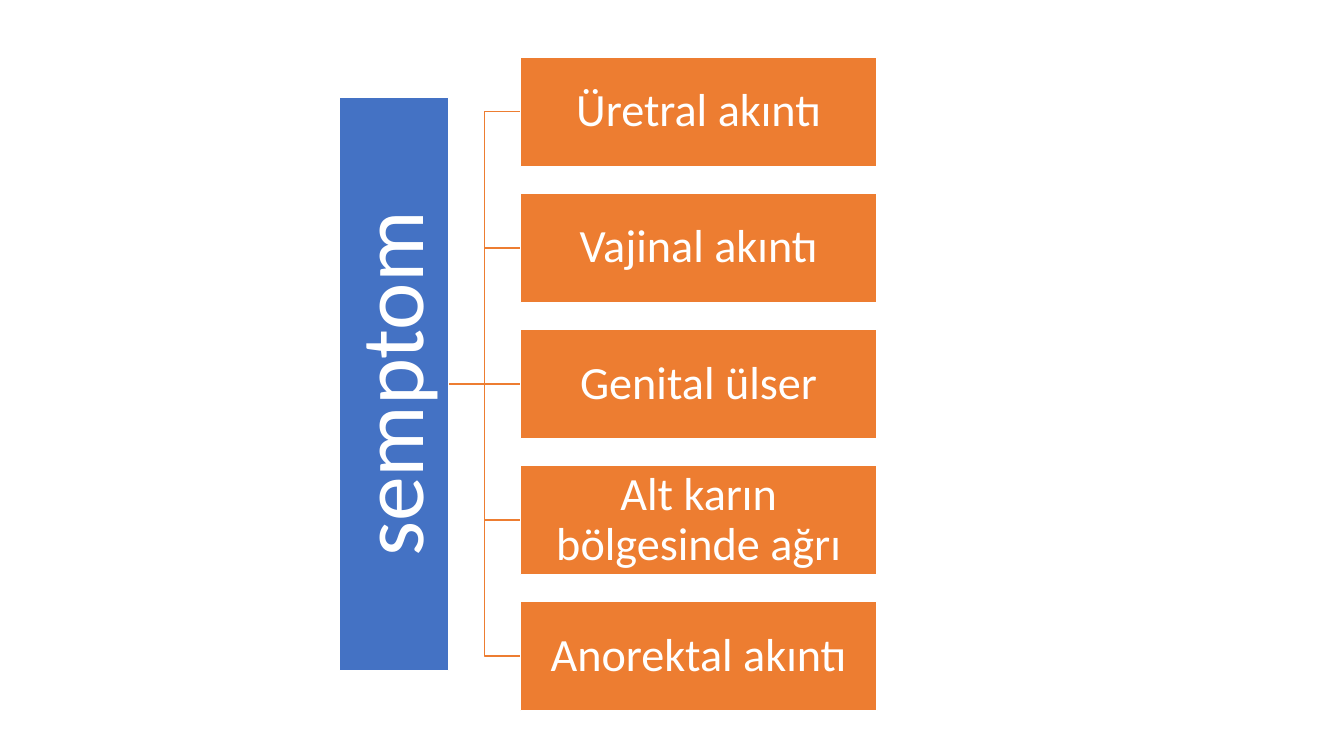
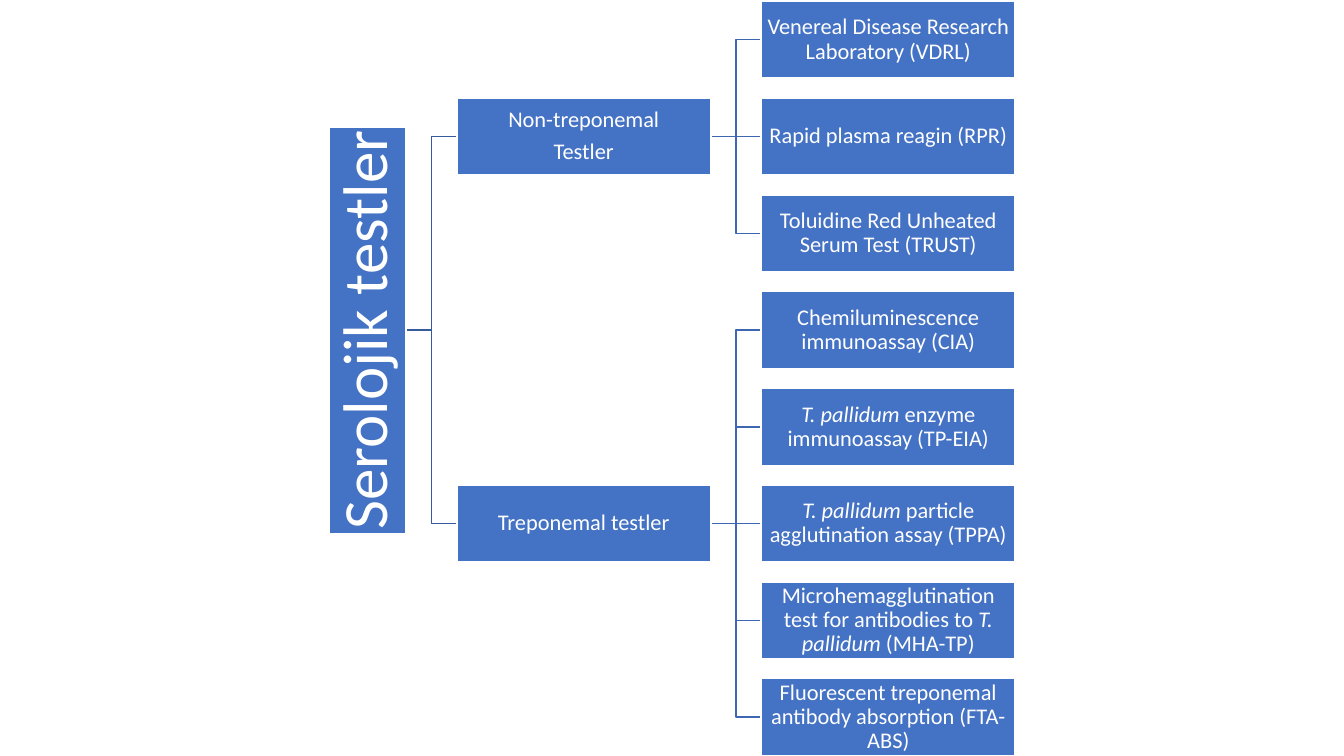
from dataclasses import dataclass

import pptx
import pptx.dml.color
import pptx.enum.shapes
import pptx.enum.text
import pptx.oxml.ns
import pptx.shapes.autoshape
import pptx.slide
import pptx.util
from lxml import etree

Inches = pptx.util.Inches
Pt = pptx.util.Pt
RGBColor = pptx.dml.color.RGBColor
Box = pptx.shapes.autoshape.Shape
Page = pptx.slide.Slide

FONT = "Calibri"
WHITE = RGBColor(0xFF, 0xFF, 0xFF)
BLUE = RGBColor(0x44, 0x72, 0xC4)
MID_BLUE = RGBColor(0x3E, 0x67, 0xB2)
DARK_BLUE = RGBColor(0x36, 0x5B, 0x9D)
ORANGE = RGBColor(0xED, 0x7D, 0x31)

ITALIC_NAME = "T. pallidum"
LEFT_SIDE, RIGHT_SIDE = 1, 3


@dataclass(frozen=True)
class Node:
    text: str
    children: tuple["Node", ...] = ()


@dataclass(frozen=True)
class TreeStyle:
    """Lengths in inches; text sizes and line widths in points."""
    left: float
    top: float
    bar_height: float
    box_width: float
    box_height: float
    column_gap: float
    row_pitch: float
    bar_size: int
    box_size: int
    bar_inset: float
    box_inset: float
    border: float
    box_fill: RGBColor
    line_colors: tuple[RGBColor, ...]

    def column(self, depth: int) -> float:
        """Left edge of a level; level 0 is the upright bar."""
        if depth == 0:
            return self.left
        first = self.left + self.box_height + self.column_gap
        return first + (depth - 1) * (self.box_width + self.column_gap)


def leaves(*texts: str) -> tuple[Node, ...]:
    return tuple(Node(text) for text in texts)


SYMPTOMS = Node("semptom", leaves(
    "Üretral akıntı",
    "Vajinal akıntı",
    "Genital ülser",
    "Alt karın bölgesinde ağrı",
    "Anorektal akıntı",
))
SYMPTOM_STYLE = TreeStyle(
    left=3.37, top=0.57, bar_height=5.68, box_width=3.54, box_height=1.08,
    column_gap=0.71, row_pitch=1.35, bar_size=64, box_size=33,
    bar_inset=0.04, box_inset=0.02, border=1,
    box_fill=ORANGE, line_colors=(ORANGE,),
)

TESTS = Node("Serolojik testler", (
    Node("Non-treponemal\nTestler", leaves(
        "Venereal Disease Research Laboratory (VDRL)",
        "Rapid plasma reagin (RPR)",
        "Toluidine Red Unheated Serum Test (TRUST)",
    )),
    Node("Treponemal testler", leaves(
        "Chemiluminescence immunoassay (CIA)",
        "T. pallidum enzyme immunoassay (TP-EIA)",
        "T. pallidum particle agglutination assay (TPPA)",
        "Microhemagglutination test for antibodies to T. pallidum (MHA-TP)",
        "Fluorescent treponemal antibody absorption (FTA-ABS)",
    )),
))
TEST_STYLE = TreeStyle(
    left=3.26, top=0.01, bar_height=4.04, box_width=2.52, box_height=0.77,
    column_gap=0.5, row_pitch=0.96, bar_size=45, box_size=16,
    bar_inset=0.03, box_inset=0.01, border=1.5,
    box_fill=BLUE, line_colors=(DARK_BLUE, MID_BLUE),
)


def write_text(box: Box, text: str, size: int, inset: float) -> None:
    """Fill a box with centred white text, the species name in italics."""
    frame = box.text_frame
    frame.word_wrap = True
    frame.vertical_anchor = pptx.enum.text.MSO_ANCHOR.MIDDLE
    frame.margin_left = frame.margin_right = Inches(inset)
    frame.margin_top = frame.margin_bottom = Inches(inset)
    for index, line in enumerate(text.split("\n")):
        para = frame.add_paragraph() if index else frame.paragraphs[0]
        para.alignment = pptx.enum.text.PP_ALIGN.CENTER
        para.line_spacing = 0.9
        para.space_after = Pt(0.35 * size)
        para.font.name = FONT
        para.font.size = Pt(size)
        para.font.color.rgb = WHITE
        for part in filter(None, line.partition(ITALIC_NAME)):
            span = para.add_run()
            span.text = part
            if part == ITALIC_NAME:
                span.font.italic = True


def add_box(page: Page, node: Node, style: TreeStyle, depth: int, middle: float) -> Box:
    """Draw one node centred on a height; the root is an upright bar."""
    is_bar = depth == 0
    width = style.box_height if is_bar else style.box_width
    height = style.bar_height if is_bar else style.box_height
    box = page.shapes.add_shape(
        pptx.enum.shapes.MSO_SHAPE.RECTANGLE,
        Inches(style.column(depth)), Inches(middle - height / 2),
        Inches(width), Inches(height),
    )
    box.shadow.inherit = False
    box.fill.solid()
    box.fill.fore_color.rgb = BLUE if is_bar else style.box_fill
    box.line.color.rgb = WHITE
    box.line.width = Pt(style.border)
    if is_bar:
        write_text(box, node.text, style.bar_size, style.bar_inset)
        box.text_frame.word_wrap = False
        box.element.txBody.bodyPr.set("vert", "vert270")
    else:
        write_text(box, node.text, style.box_size, style.box_inset)
    return box


def join(page: Page, parent: Box, child: Box, is_level: bool, color: RGBColor) -> None:
    """Connect two boxes with a line placed behind every box."""
    kinds = pptx.enum.shapes.MSO_CONNECTOR
    kind = kinds.STRAIGHT if is_level else kinds.ELBOW
    link = page.shapes.add_connector(kind, 0, 0, 0, 0)
    link.begin_connect(parent, RIGHT_SIDE)
    link.end_connect(child, LEFT_SIDE)
    link.line.color.rgb = color
    link.line.width = Pt(1)
    etree.SubElement(link.element.spPr, pptx.oxml.ns.qn("a:effectLst"))
    page.shapes[0].element.addprevious(link.element)


def add_branch(page: Page, node: Node, style: TreeStyle,
               depth: int = 0, row: int = 0) -> tuple[Box, float, int]:
    """Draw a node and all below it; return its box, its middle and the next free row."""
    branches: list[tuple[Box, float]] = []
    for child in node.children:
        child_box, child_middle, row = add_branch(page, child, style, depth + 1, row)
        branches.append((child_box, child_middle))
    if branches:
        middle = (branches[0][1] + branches[-1][1]) / 2
    else:
        middle = style.top + style.box_height / 2 + row * style.row_pitch
        row += 1
    box = add_box(page, node, style, depth, middle)
    for child_box, child_middle in branches:
        is_level = abs(child_middle - middle) < 0.01
        join(page, box, child_box, is_level, style.line_colors[depth])
    return box, middle, row


def main() -> None:
    deck = pptx.Presentation()
    deck.slide_width, deck.slide_height = Inches(13.33), Inches(7.5)
    blank = deck.slide_layouts[6]
    for tree, style in ((SYMPTOMS, SYMPTOM_STYLE), (TESTS, TEST_STYLE)):
        add_branch(deck.slides.add_slide(blank), tree, style)
    deck.save("out.pptx")


if __name__ == "__main__":
    main()
